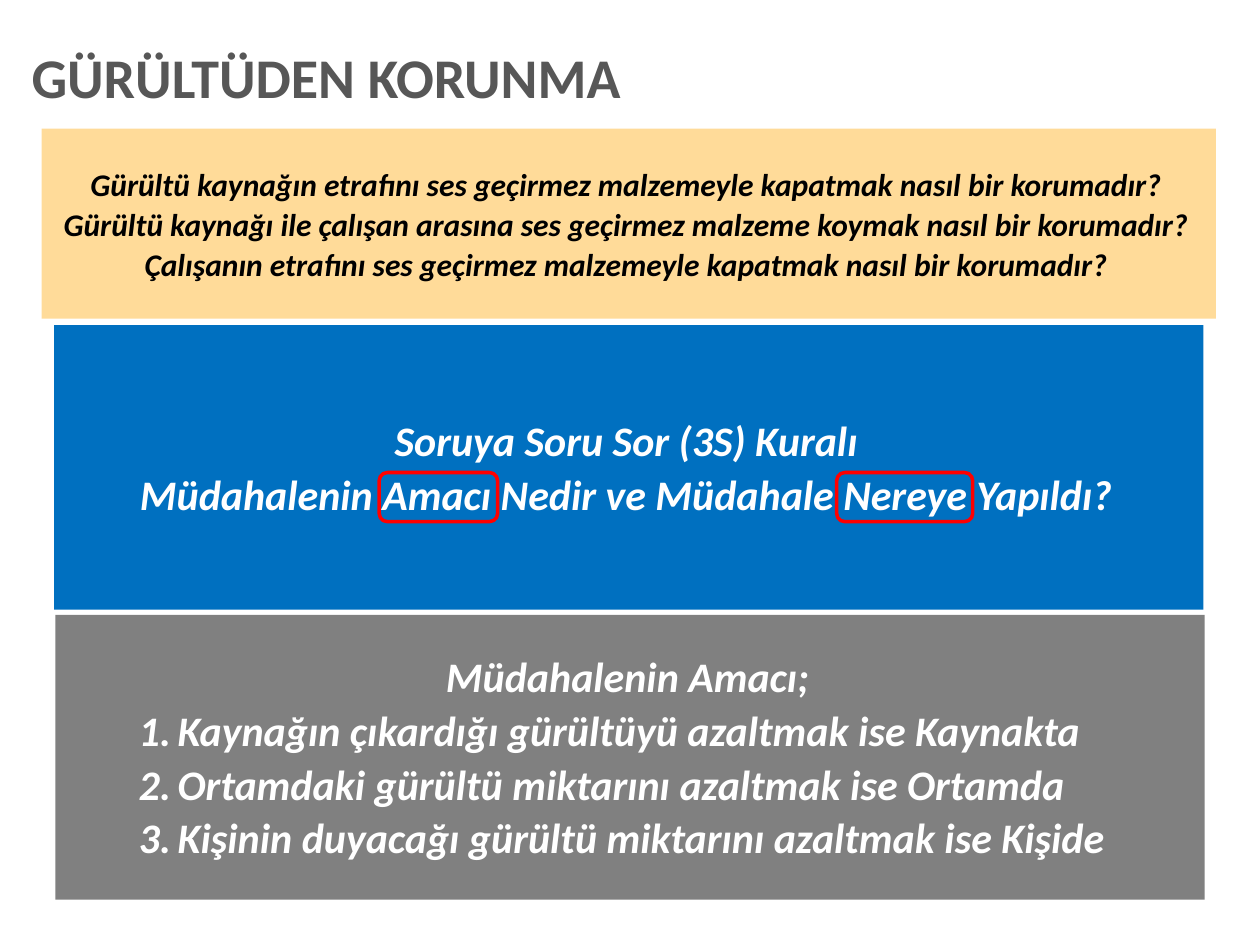
from dataclasses import dataclass

import pptx
import pptx.dml.color
import pptx.enum.shapes
import pptx.enum.text
import pptx.oxml.ns
import pptx.util
from lxml import etree
from pptx.util import Inches


@dataclass(frozen=True)
class Theme:
    font: str = "Calibri"
    title_size: int = 32
    large_size: int = 24
    small_size: int = 18
    title: str = "575757"
    white: str = "FFFFFF"
    black: str = "000000"
    sand: str = "FFDB99"
    blue: str = "0070C0"
    gray: str = "808080"
    red: str = "FF0000"


THEME = Theme()

QUESTIONS = [
    "Gürültü kaynağın etrafını ses geçirmez malzemeyle kapatmak nasıl bir korumadır?",
    "Gürültü kaynağı ile çalışan arasına ses geçirmez malzeme koymak nasıl bir korumadır?",
    "Çalışanın etrafını ses geçirmez malzemeyle kapatmak nasıl bir korumadır?",
]
RULE = [
    "Soruya Soru Sor (3S) Kuralı",
    "Müdahalenin Amacı Nedir ve Müdahale Nereye Yapıldı?",
]
PURPOSE = "Müdahalenin Amacı;"
PURPOSES = [
    "Kaynağın çıkardığı gürültüyü azaltmak ise Kaynakta",
    "Ortamdaki gürültü miktarını azaltmak ise Ortamda",
    "Kişinin duyacağı gürültü miktarını azaltmak ise Kişide",
]


def rgb(color):
    return pptx.dml.color.RGBColor.from_string(color)


def set_margins(text_frame, left, top, right, bottom):
    text_frame.margin_left = Inches(left)
    text_frame.margin_top = Inches(top)
    text_frame.margin_right = Inches(right)
    text_frame.margin_bottom = Inches(bottom)


def format_paragraph(paragraph, size, color, alignment, italic=True):
    paragraph.alignment = alignment
    paragraph.line_spacing = 0.9
    for run in paragraph.runs:
        run.font.name = THEME.font
        run.font.size = pptx.util.Pt(size)
        run.font.bold = True
        run.font.italic = italic
        run.font.color.rgb = rgb(color)


def number_paragraph(paragraph, color):
    """Give the paragraph an automatic number with a hanging indent."""
    qn = pptx.oxml.ns.qn
    paragraph.level = 1
    properties = paragraph._p.get_or_add_pPr()
    properties.set("marL", str(Inches(0.85)))
    properties.set("indent", str(Inches(-0.31)))
    bullet_color = etree.SubElement(properties, qn("a:buClr"))
    etree.SubElement(bullet_color, qn("a:srgbClr"), val=color)
    etree.SubElement(properties, qn("a:buFont"), typeface=THEME.font)
    etree.SubElement(properties, qn("a:buAutoNum"), type="arabicPeriod")


def set_title(slide, text):
    title = slide.shapes.title
    title.left, title.top = Inches(0.25), Inches(0.28)
    title.width, title.height = Inches(9.64), Inches(0.71)
    text_frame = title.text_frame
    text_frame.text = text
    text_frame.auto_size = pptx.enum.text.MSO_AUTO_SIZE.NONE
    text_frame.vertical_anchor = pptx.enum.text.MSO_ANCHOR.MIDDLE
    set_margins(text_frame, 0, 0.05, 0, 0.05)
    format_paragraph(text_frame.paragraphs[0], THEME.title_size, THEME.title,
                     pptx.enum.text.PP_ALIGN.LEFT, italic=False)


def add_panel(slide, left, top, width, height, fill, size, color, lines, numbered=()):
    """Add a filled box of centred lines, followed by any numbered lines."""
    shape = slide.shapes.add_shape(
        pptx.enum.shapes.MSO_SHAPE.RECTANGLE,
        Inches(left), Inches(top), Inches(width), Inches(height))
    shape.shadow.inherit = False
    shape.fill.solid()
    shape.fill.fore_color.rgb = rgb(fill)
    shape.line.fill.background()
    text_frame = shape.text_frame
    text_frame.word_wrap = True
    text_frame.vertical_anchor = pptx.enum.text.MSO_ANCHOR.MIDDLE
    set_margins(text_frame, 0.12, 0.12, 0.16, 0.08)
    text_frame.text = "\n".join([*lines, *numbered])
    for index, paragraph in enumerate(text_frame.paragraphs):
        alignment = pptx.enum.text.PP_ALIGN.CENTER
        if index >= len(lines):
            alignment = pptx.enum.text.PP_ALIGN.LEFT
            number_paragraph(paragraph, color)
        format_paragraph(paragraph, size, color, alignment)
        paragraph.space_after = pptx.util.Pt(0.2 * size)


def add_highlight(slide, left, width):
    shape = slide.shapes.add_shape(
        pptx.enum.shapes.MSO_SHAPE.ROUNDED_RECTANGLE,
        Inches(left), Inches(3.75), Inches(width), Inches(0.39))
    shape.shadow.inherit = False
    shape.fill.background()
    shape.line.color.rgb = rgb(THEME.red)
    shape.line.width = pptx.util.Pt(2)


def main():
    presentation = pptx.Presentation()
    presentation.slide_width = Inches(10)
    presentation.slide_height = Inches(7.5)
    slide = presentation.slides.add_slide(presentation.slide_layouts[5])

    set_title(slide, "GÜRÜLTÜDEN KORUNMA")
    add_panel(slide, 0.43, 2.58, 9.12, 2.26, THEME.blue,
              THEME.large_size, THEME.white, RULE)
    add_highlight(slide, 3.01, 0.94)
    add_highlight(slide, 6.64, 1.08)
    add_panel(slide, 0.33, 1.02, 9.32, 1.51, THEME.sand,
              THEME.small_size, THEME.black, QUESTIONS)
    add_panel(slide, 0.44, 4.88, 9.12, 2.26, THEME.gray,
              THEME.large_size, THEME.white, [PURPOSE], PURPOSES)

    presentation.save("out.pptx")


if __name__ == "__main__":
    main()
